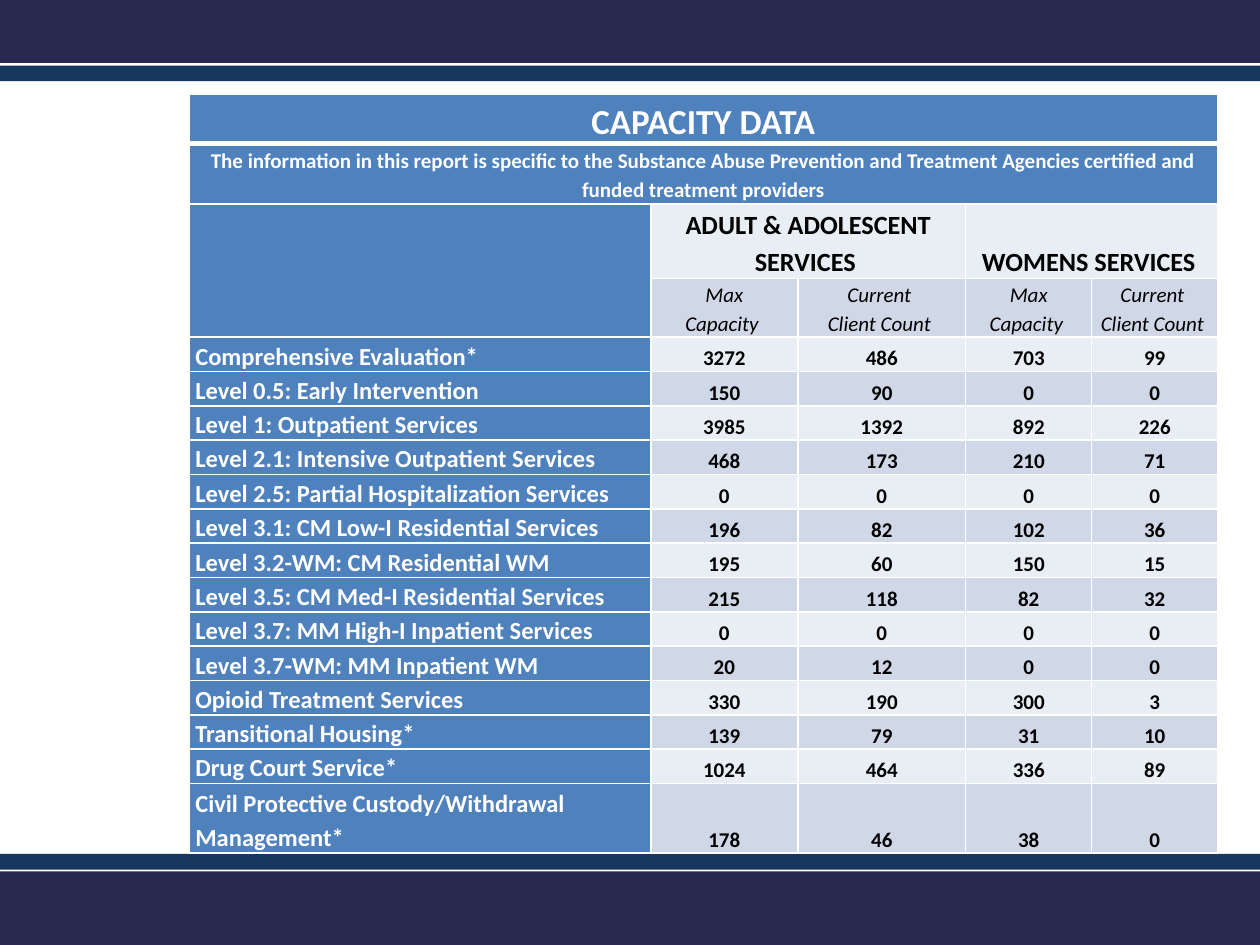
from copy import deepcopy

from lxml import etree
from pptx import Presentation
from pptx.dml.color import RGBColor
from pptx.enum.shapes import MSO_SHAPE
from pptx.enum.text import MSO_ANCHOR, PP_ALIGN
from pptx.oxml.ns import qn
from pptx.util import Pt

RECT = MSO_SHAPE.RECTANGLE
LEFT, CENTER = PP_ALIGN.LEFT, PP_ALIGN.CENTER
TOP, MIDDLE, BOTTOM = MSO_ANCHOR.TOP, MSO_ANCHOR.MIDDLE, MSO_ANCHOR.BOTTOM

WHITE, BLACK = "FFFFFF", "000000"
NAVY, DEEP_BLUE = "28294E", "17375E"
BLUE, LIGHT, TINT = "4F81BD", "E9EDF4", "D0D8E8"

# left, top, width, height, colour
BANDS = [
    (0, 0, 720, 36, NAVY),
    (0, 37.5, 720.6, 8.9, DEEP_BLUE),
    (0, 498, 720, 42.2, NAVY),
    (0, 488, 720.6, 9, DEEP_BLUE),
]

TITLE = "CAPACITY DATA"
NOTE = ("The information in this report is specific to the Substance Abuse "
        "Prevention and Treatment Agencies certified and funded treatment providers")
GROUPS = [("ADULT & ADOLESCENT SERVICES ", 1, MIDDLE),
          ("WOMENS SERVICES ", 3, BOTTOM)]
MEASURES = ["Max\nCapacity ", "Current \nClient Count "] * 2
SERVICES = [
    ("Comprehensive Evaluation*", 3272, 486, 703, 99),
    ("Level 0.5: Early Intervention", 150, 90, 0, 0),
    ("Level 1: Outpatient Services", 3985, 1392, 892, 226),
    ("Level 2.1: Intensive Outpatient Services", 468, 173, 210, 71),
    ("Level 2.5: Partial Hospitalization Services", 0, 0, 0, 0),
    ("Level 3.1: CM Low-I Residential Services", 196, 82, 102, 36),
    ("Level 3.2-WM: CM Residential WM", 195, 60, 150, 15),
    ("Level 3.5: CM Med-I Residential Services", 215, 118, 82, 32),
    ("Level 3.7: MM High-I Inpatient Services", 0, 0, 0, 0),
    ("Level 3.7-WM: MM Inpatient WM", 20, 12, 0, 0),
    ("Opioid Treatment Services", 330, 190, 300, 3),
    ("Transitional Housing*", 139, 79, 31, 10),
    ("Drug Court Service*", 1024, 464, 336, 89),
    ("Civil Protective Custody/Withdrawal Management*", 178, 46, 38, 0),
]
HEADER_ROWS = 4
TOP_ANCHORED = 6  # service labels set from the top of their cell
COL_WIDTHS = [263.9, 84, 96, 72, 72]
ROW_HEIGHTS = [27.2, 34.5, 42.4, 32] + [19.6] * (len(SERVICES) - 1) + [39.6]

CELL = {"margin_left": Pt(3.6), "margin_right": Pt(3.6),
        "margin_top": 0, "margin_bottom": 0}


def rgb(value):
    return RGBColor.from_string(value)


def add_band(slide, left, top, width, height, color):
    sp = slide.shapes.add_shape(RECT, Pt(left), Pt(top), Pt(width), Pt(height))
    sp.shadow.inherit = False
    sp.fill.solid()
    sp.fill.fore_color.rgb = rgb(color)
    sp.line.fill.background()


def add_border(cell, side, width):
    ln = etree.SubElement(cell._tc.get_or_add_tcPr(), qn(f"a:ln{side}"),
                          w=str(Pt(width)))
    fill = etree.SubElement(ln, qn("a:solidFill"))
    etree.SubElement(fill, qn("a:srgbClr"), val=WHITE)


def style_cell(cell, color, top=1, bottom=1):
    for name, value in CELL.items():
        setattr(cell, name, value)
    for side, width in zip("LRTB", (1, 1, top, bottom)):
        add_border(cell, side, width)
    cell.fill.solid()
    cell.fill.fore_color.rgb = rgb(color)


def write_cell(cell, text, size, color=BLACK, align=CENTER, anchor=MIDDLE,
               bold=True, italic=False):
    cell.vertical_anchor = anchor
    p = cell.text_frame.paragraphs[0]
    p.alignment = align
    p.line_spacing = 1.15
    p.text = text.replace("\n", "\v")
    font = {"name": "Calibri", "size": Pt(size), "bold": bold, "italic": italic}
    for r in p.runs:
        for name, value in font.items():
            setattr(r.font, name, value)
        r.font.color.rgb = rgb(color)
    # Line breaks take the size of the text around them
    for br in p._p.findall(qn("a:br")):
        br.append(deepcopy(p.runs[0]._r.rPr))


def row_color(row):
    return LIGHT if row % 2 == 0 else TINT


def add_capacity_table(slide):
    rows, cols = len(ROW_HEIGHTS), len(COL_WIDTHS)
    frame = slide.shapes.add_table(rows, cols, Pt(108), Pt(54),
                                   Pt(sum(COL_WIDTHS)), Pt(sum(ROW_HEIGHTS)))
    table = frame.table
    for col, width in zip(table.columns, COL_WIDTHS):
        col.width = Pt(width)
    for row, height in zip(table.rows, ROW_HEIGHTS):
        row.height = Pt(height)

    # Fills and borders, with a thick rule under the title
    for r in range(rows):
        for c in range(cols):
            color = BLUE if r < 2 or c == 0 else row_color(r)
            style_cell(table.cell(r, c), color, top=3 if r == 1 else 1,
                       bottom=3 if r == 0 else 1)

    # Title, note and column headings
    for r, (text, size) in enumerate([(TITLE, 20), (NOTE, 12)]):
        table.cell(r, 0).merge(table.cell(r, cols - 1))
        write_cell(table.cell(r, 0), text, size, WHITE)
    table.cell(2, 0).merge(table.cell(3, 0))
    for text, c, anchor in GROUPS:
        table.cell(2, c).merge(table.cell(2, c + 1))
        write_cell(table.cell(2, c), text, 15, anchor=anchor)
    for c, text in enumerate(MEASURES, 1):
        write_cell(table.cell(3, c), text, 12, bold=False, italic=True)

    # Services
    for i, (label, *counts) in enumerate(SERVICES):
        r = HEADER_ROWS + i
        write_cell(table.cell(r, 0), label, 14, WHITE, LEFT,
                   TOP if i < TOP_ANCHORED else BOTTOM)
        for c, count in enumerate(counts, 1):
            write_cell(table.cell(r, c), str(count), 12, anchor=BOTTOM)


def main():
    prs = Presentation()
    prs.slide_width, prs.slide_height = Pt(720), Pt(540)
    slide = prs.slides.add_slide(prs.slide_layouts[6])
    for band in BANDS:
        add_band(slide, *band)
    add_capacity_table(slide)
    prs.save("out.pptx")


if __name__ == "__main__":
    main()
